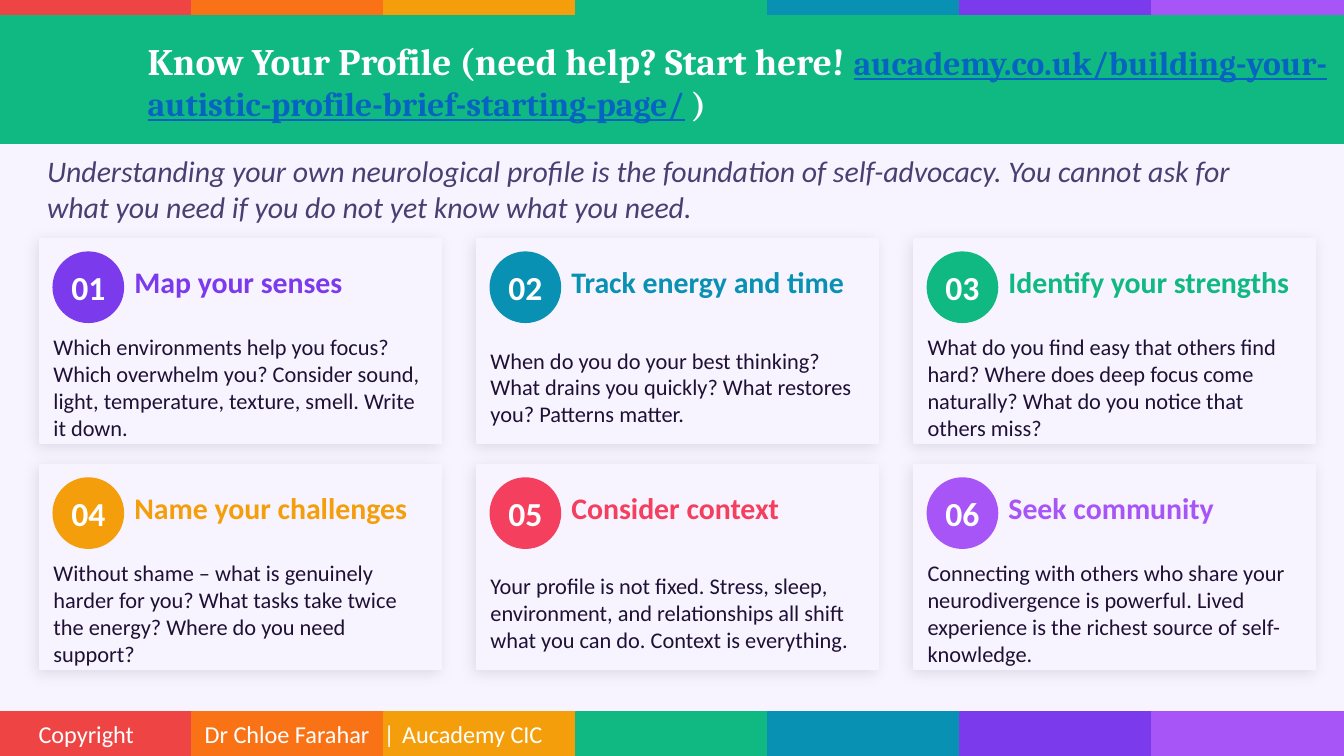
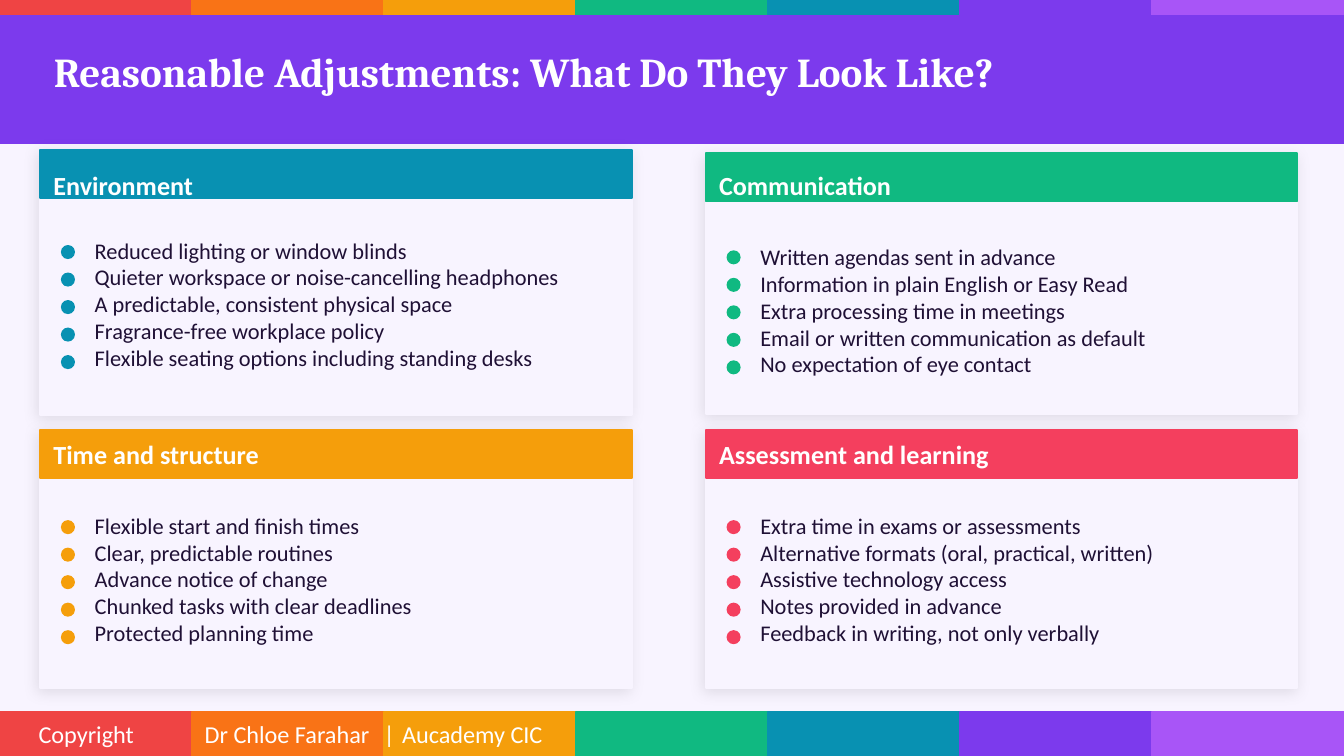
from dataclasses import dataclass

from lxml.etree import SubElement
from pptx import Presentation
from pptx.dml.color import RGBColor
from pptx.enum.shapes import MSO_SHAPE
from pptx.enum.text import MSO_ANCHOR, PP_ALIGN
from pptx.oxml.ns import qn
from pptx.util import Cm, Pt


@dataclass(frozen=True)
class Theme:
    red: str = "EF4444"
    orange: str = "F97316"
    amber: str = "F59E0B"
    green: str = "10B981"
    teal: str = "0891B2"
    violet: str = "7C3AED"
    purple: str = "A855F7"
    rose: str = "F43F5E"
    paper: str = "F8F4FF"
    white: str = "FFFFFF"
    ink: str = "1F1035"
    plum: str = "4B3F72"
    link: str = "0563C1"
    serif: str = "Cambria"
    sans: str = "Calibri"
    title: int = 22
    long: int = 20
    large: int = 18
    medium: int = 16
    label: int = 14
    foot: int = 13
    small: int = 12


T = Theme()
BODY = {"name": T.sans, "size": T.small, "color": T.ink}
INTRO = {"name": T.sans, "size": T.medium, "color": T.plum, "italic": True}
COUNT = {"name": T.sans, "size": T.large, "color": T.white, "bold": True}
HEAD = {"name": T.sans, "size": T.medium, "bold": True}
LABEL = COUNT | {"size": T.label}
FOOT = {"name": T.sans, "size": T.foot, "color": T.white}
TITLE = {"name": T.serif, "size": T.title, "color": T.white, "bold": True}
LONG = TITLE | {"size": T.long}
TAIL = TITLE | {"size": T.large}
LINK = TAIL | {"color": T.link, "underline": True}


def paint(slide, kind, spot, hue, lift=False):
    """Draw a one-colour shape; lift gives it a soft shadow."""
    shape = slide.shapes.add_shape(kind, *map(Cm, spot))
    shape.shadow.inherit = False
    color = RGBColor.from_string(hue)
    shape.fill.solid()
    shape.fill.fore_color.rgb = color
    shape.line.color.rgb = color
    shape.line.width = Pt(1)
    if lift:
        effects = shape._element.spPr.find(qn("a:effectLst"))
        shade = SubElement(effects, qn("a:outerShdw"), blurRad=str(Pt(8)),
                           dist=str(Pt(2)), dir="8100000", algn="bl",
                           rotWithShape="0")
        black = SubElement(shade, qn("a:srgbClr"), val="000000")
        SubElement(black, qn("a:alpha"), val="10000")


def write(slide, spot, lines, align=None, pad=0, tabs=()):
    """Add a text box; each line is a list of (text, style) runs."""
    frame = slide.shapes.add_textbox(*map(Cm, spot)).text_frame
    frame.word_wrap = True
    frame.vertical_anchor = MSO_ANCHOR.MIDDLE
    frame.margin_left = frame.margin_right = Cm(pad)
    frame.margin_top = frame.margin_bottom = Cm(pad / 2)
    for row, runs in enumerate(lines):
        para = frame.add_paragraph() if row else frame.paragraphs[0]
        para.alignment = align
        if tabs:
            stops = SubElement(para._p.get_or_add_pPr(), qn("a:tabLst"))
            for stop in tabs:
                SubElement(stops, qn("a:tab"), pos=str(Cm(stop)), algn="l")
        for text, style in runs:
            run = para.add_run()
            run.text = text
            for key, value in style.items():
                if key == "color":
                    run.font.color.rgb = RGBColor.from_string(value)
                else:
                    setattr(run.font, key, Pt(value) if key == "size" else value)


RECT, OVAL = MSO_SHAPE.RECTANGLE, MSO_SHAPE.OVAL
WIDE, HIGH = 25.4, 14.29
RAINBOW = (T.red, T.orange, T.amber, T.green, T.teal, T.violet, T.purple)
STRIPE = WIDE / len(RAINBOW)

deck = Presentation()
deck.slide_width, deck.slide_height = Cm(WIDE), Cm(HIGH)

# Shared frame: stripes, title band and footer
titles = [
    (T.green, (2.79, 0.46, 22.61, 2.13), [
        ("Know Your Profile (need help? Start here! ", LONG),
        ("aucademy.co.uk/building-your-autistic-profile-brief-starting-page/", LINK),
        (" )", TAIL)]),
    (T.violet, (1.02, 0.46, 23.37, 1.78), [
        ("Reasonable Adjustments: What Do They Look Like?", TITLE)]),
]
for hue, spot, runs in titles:
    slide = deck.slides.add_slide(deck.slide_layouts[6])
    slide.background.fill.solid()
    slide.background.fill.fore_color.rgb = RGBColor.from_string(T.paper)
    for top, tall in ((0, 0.3), (13.46, 0.83)):
        for col, tint in enumerate(RAINBOW):
            paint(slide, RECT, (col * STRIPE, top, STRIPE, tall), tint)
    paint(slide, RECT, (0, 0.3, WIDE, 2.41), hue)
    write(slide, spot, [runs])
    write(slide, (0.48, 13.36, 21.03, 1.02),
          [[("Copyright\tDr Chloe Farahar\t|\tAucademy CIC", FOOT)]],
          pad=0.25, tabs=(3.14, 6.52, 6.87))

profile, adjust = deck.slides

# Profile: six numbered cards
write(profile, (0.89, 3, 23.62, 1.14), [[(
    "Understanding your own neurological profile is the foundation of "
    "self-advocacy. You cannot ask for what you need if you do not yet know "
    "what you need.", INTRO)]])
cards = [
    (T.violet, "Map your senses",
     "Which environments help you focus? Which overwhelm you? Consider sound, "
     "light, temperature, texture, smell. Write it down."),
    (T.teal, "Track energy and time",
     "When do you do your best thinking? What drains you quickly? What restores "
     "you? Patterns matter."),
    (T.green, "Identify your strengths",
     "What do you find easy that others find hard? Where does deep focus come "
     "naturally? What do you notice that others miss?"),
    (T.amber, "Name your challenges",
     "Without shame – what is genuinely harder for you? What tasks take twice "
     "the energy? Where do you need support?"),
    (T.rose, "Consider context",
     "Your profile is not fixed. Stress, sleep, environment, and relationships "
     "all shift what you can do. Context is everything."),
    (T.purple, "Seek community",
     "Connecting with others who share your neurodivergence is powerful. Lived "
     "experience is the richest source of self-knowledge."),
]
for index, (hue, head, text) in enumerate(cards):
    row, col = divmod(index, 3)
    left, top = 0.76 + col * 8.26, 4.52 + row * 4.27
    inner = left + 0.25
    paint(profile, RECT, (left, top, 7.57, 3.86), T.paper, lift=True)
    paint(profile, OVAL, (inner, top + 0.25, 1.32, 1.32), hue)
    write(profile, (inner, top + 0.3, 1.32, 1.22),
          [[(f"{index + 1:02}", COUNT)]], PP_ALIGN.CENTER)
    write(profile, (left + 1.78, top + 0.25, 5.59, 1.12),
          [[(head, HEAD | {"color": hue})]])
    write(profile, (inner, top + 1.73, 7.11, 2.13), [[(text, BODY)]])

# Adjustments: four panels, with the tops of panel, label, list and first dot
panels = [
    (T.teal, "Environment", 0.76, 2.84, 5, 3.15, 3.99, 4.65, [
        "Reduced lighting or window blinds",
        "Quieter workspace or noise-cancelling headphones",
        "A predictable, consistent physical space",
        "Fragrance-free workplace policy",
        "Flexible seating options including standing desks"]),
    (T.green, "Communication", 13.34, 2.9, 4.93, 3.15, 4.11, 4.75, [
        "Written agendas sent in advance",
        "Information in plain English or Easy Read",
        "Extra processing time in meetings",
        "Email or written communication as default",
        "No expectation of eye contact"]),
    (T.amber, "Time and structure", 0.76, 8.13, 4.88, 8.23, 9.19, 9.85, [
        "Flexible start and finish times",
        "Clear, predictable routines",
        "Advance notice of change",
        "Chunked tasks with clear deadlines",
        "Protected planning time"]),
    (T.rose, "Assessment and learning", 13.34, 8.13, 4.88, 8.23, 9.19, 9.85, [
        "Extra time in exams or assessments",
        "Alternative formats (oral, practical, written)",
        "Assistive technology access",
        "Notes provided in advance",
        "Feedback in writing, not only verbally"]),
]
for hue, head, left, top, tall, label, body, dot, items in panels:
    paint(adjust, RECT, (left, top, 11.18, tall), T.paper, lift=True)
    paint(adjust, RECT, (left, top, 11.18, 0.91), hue)
    write(adjust, (left + 0.25, label, 10.67, 0.71), [[(head, LABEL)]])
    write(adjust, (left + 1.03, body, 9.75, 3.51),
          [[(item, BODY)] for item in items])
    for row in range(len(items)):
        paint(adjust, OVAL, (left + 0.41, dot + row * 0.52, 0.23, 0.23), hue)

deck.save("out.pptx")
